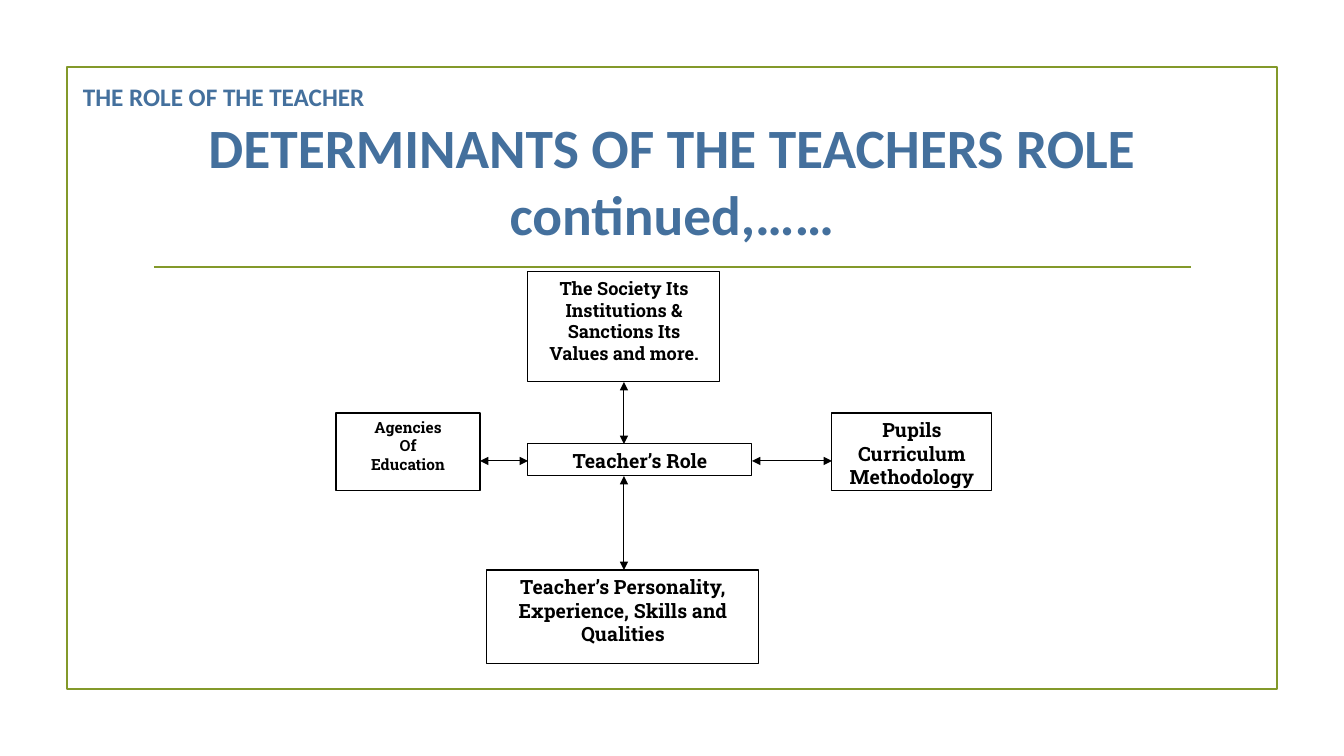
from pptx import Presentation
from pptx import util as u
from pptx.dml.color import RGBColor
from pptx.enum import shapes, text
from pptx.oxml.ns import qn
from lxml import etree

SCALE = 914400 / 100.8
GREEN, BLUE, BLACK, WHITE = "83992A", "44709D", "000000", "FFFFFF"


def px(n):
    """Turn pixels into EMU."""
    return u.Emu(round(n * SCALE))


def rgb(code):
    """Turn a hex string into a colour."""
    return RGBColor.from_string(code)


def write(sp, lines, size, font, color, align, anchor, after=0):
    """Fill a shape with bold paragraphs."""
    tf = sp.text_frame
    tf.word_wrap = True
    tf.vertical_anchor = anchor
    tf.text = lines
    for p in tf.paragraphs:
        p.alignment = align
        p.space_after = u.Pt(after)
        for r in p.runs:
            r.font.size, r.font.name, r.font.bold = u.Pt(size), font, True
            r.font.color.rgb = rgb(color)


def heading(s, box, words, size, align, anchor):
    """Add a blue heading."""
    sp = s.shapes.add_textbox(*map(px, box))
    write(sp, words, size, "Calibri", BLUE, align, anchor)


def rect(s, box, line, width, fill=None):
    """Add an outlined rectangle."""
    sp = s.shapes.add_shape(shapes.MSO_SHAPE.RECTANGLE, *map(px, box))
    sp.shadow.inherit = False
    if fill:
        sp.fill.solid()
        sp.fill.fore_color.rgb = rgb(fill)
    else:
        sp.fill.background()
    sp.line.color.rgb = rgb(line)
    sp.line.width = u.Pt(width)
    return sp


def node(s, box, words, size, after=4):
    """Add a labelled box of the diagram."""
    sp = rect(s, box, BLACK, 0.75, WHITE)
    write(sp, words, size, "Roboto Slab", BLACK,
          text.PP_ALIGN.CENTER, text.MSO_ANCHOR.TOP, after)


def line(s, ends, color, width, arrows=False):
    """Add a straight line, with arrowheads at both ends if asked."""
    c = s.shapes.add_connector(shapes.MSO_CONNECTOR.STRAIGHT, *map(px, ends))
    c.line.color.rgb = rgb(color)
    c.line.width = u.Pt(width)
    if arrows:
        ln = c.line._get_or_add_ln()
        for tag in ("a:headEnd", "a:tailEnd"):
            etree.SubElement(ln, qn(tag), type="triangle")
    etree.SubElement(c._element.spPr, qn("a:effectLst"))


def main():
    """Build the slide and save it."""
    prs = Presentation()
    prs.slide_width, prs.slide_height = px(1344), px(756)
    s = prs.slides.add_slide(prs.slide_layouts[6])

    rect(s, (67, 67, 1210, 622), GREEN, 1.25)
    line(s, (154, 267, 1191, 267), GREEN, 1.25)
    heading(s, (143, 108, 1058, 144),
            "DETERMINANTS OF THE TEACHERS ROLE continued,……", 39.6,
            text.PP_ALIGN.CENTER, text.MSO_ANCHOR.MIDDLE)
    heading(s, (73, 76, 326, 40), "THE ROLE OF THE TEACHER", 18,
            text.PP_ALIGN.LEFT, text.MSO_ANCHOR.TOP)

    node(s, (528, 272, 192, 110),
         "The Society Its Institutions & Sanctions Its Values and more.", 13)
    node(s, (336, 413, 144, 78), "Agencies\nOf\nEducation", 11, 0)
    node(s, (528, 444, 224, 32), "Teacher’s Role", 14)
    node(s, (832, 413, 160, 78), "Pupils Curriculum Methodology", 14)
    node(s, (487, 570, 272, 94),
         "Teacher’s Personality, Experience, Skills and Qualities", 14)

    for ends in ((624, 382, 624, 444), (624, 476, 624, 570),
                 (480, 461, 528, 461), (752, 461, 832, 461)):
        line(s, ends, BLACK, 0.75, True)

    prs.save("out.pptx")


if __name__ == "__main__":
    main()
